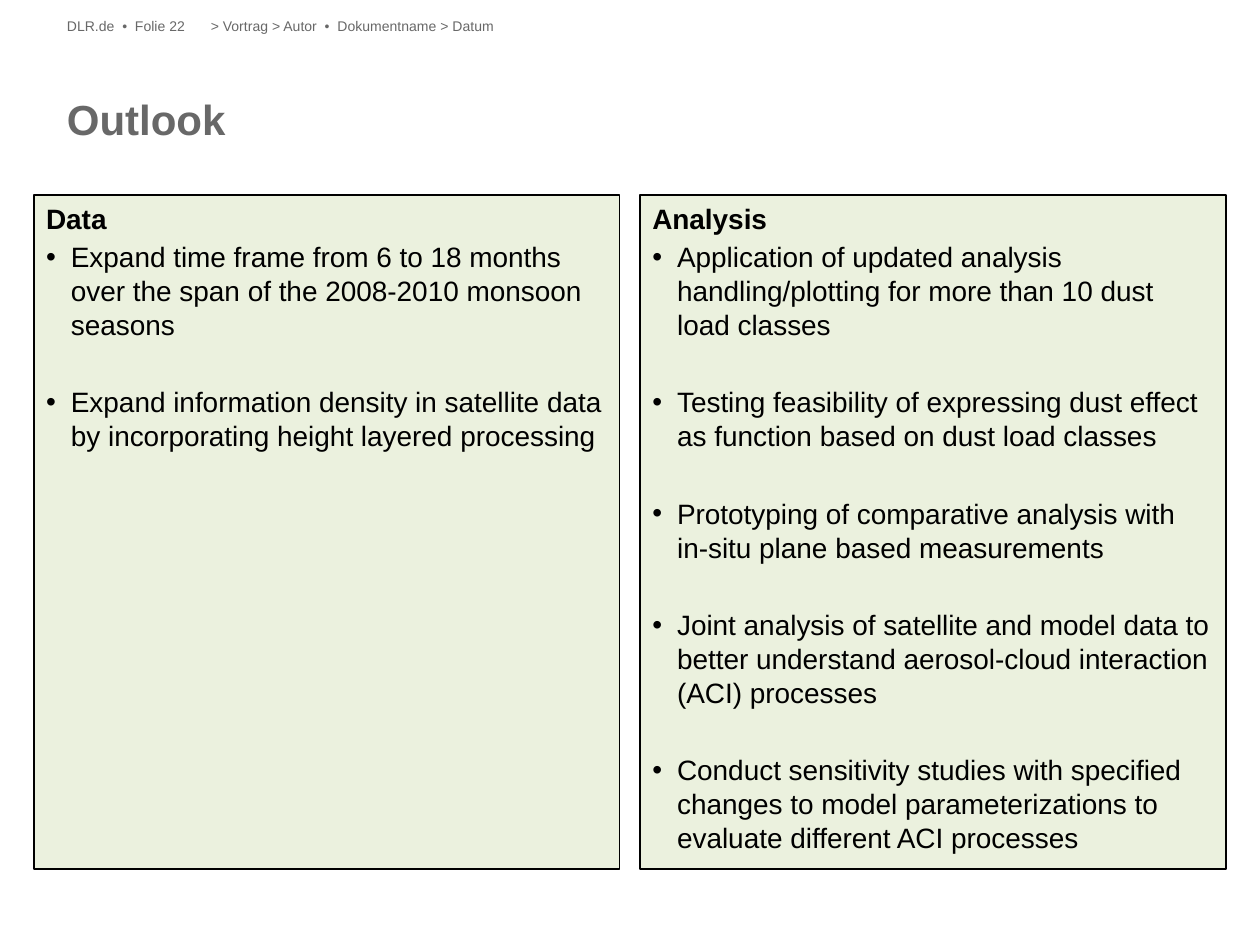
import pptx
import pptx.dml.color
import pptx.enum.shapes
import pptx.enum.text
import pptx.oxml.ns
import pptx.util
from lxml import etree

Cm, Pt = pptx.util.Cm, pptx.util.Pt
RGBColor = pptx.dml.color.RGBColor

GREY = RGBColor(0x68, 0x68, 0x68)
BLACK = RGBColor(0x00, 0x00, 0x00)
PALE_GREEN = RGBColor(0xEB, 0xF1, 0xDE)


def write(p, text, size=16, color=BLACK, bold=False, bullet=False,
          before=0, font="Arial"):
    """Fill a paragraph with one formatted run."""
    p.alignment = pptx.enum.text.PP_ALIGN.LEFT
    p.line_spacing = 1.0
    p.space_before = Pt(before)
    if bullet:
        pPr = p._p.get_or_add_pPr()
        pPr.set("marL", str(Cm(0.5)))
        pPr.set("indent", str(-Cm(0.5)))
        etree.SubElement(pPr, pptx.oxml.ns.qn("a:buFont"), typeface="Arial")
        etree.SubElement(pPr, pptx.oxml.ns.qn("a:buChar"), char="•")
    r = p.add_run()
    r.text = text
    r.font.name = font
    r.font.size = Pt(size)
    r.font.bold = bold
    r.font.color.rgb = color


class Deck:
    """Holds the slide and the shared panel style."""
    panel_top, panel_width, panel_height = Cm(3.93), Cm(11.81), Cm(13.59)
    heading_gap = 3     # points between heading and first bullet
    bullet_gap = 25.3   # points between bullets

    def __init__(self, prs):
        self.s = prs.slides.add_slide(prs.slide_layouts[6])

    def label(self, text, left, top, width, height, **fmt):
        sp = self.s.shapes.add_textbox(left, top, width, height)
        tf = sp.text_frame
        tf.word_wrap = True
        tf.margin_left = tf.margin_right = tf.margin_top = tf.margin_bottom = 0
        write(tf.paragraphs[0], text, color=GREY, **fmt)

    def panel(self, left, heading, bullets):
        sp = self.s.shapes.add_shape(
            pptx.enum.shapes.MSO_SHAPE.RECTANGLE,
            left, self.panel_top, self.panel_width, self.panel_height)
        sp.shadow.inherit = False
        sp.fill.solid()
        sp.fill.fore_color.rgb = PALE_GREEN
        sp.line.color.rgb = BLACK
        sp.line.width = Pt(1)
        tf = sp.text_frame
        tf.word_wrap = True
        tf.vertical_anchor = pptx.enum.text.MSO_ANCHOR.TOP
        write(tf.paragraphs[0], heading, bold=True)
        for i, text in enumerate(bullets):
            write(tf.add_paragraph(), text, bullet=True,
                  before=self.bullet_gap if i else self.heading_gap)


def main():
    prs = pptx.Presentation()
    prs.slide_width, prs.slide_height = Cm(25.4), Cm(19.05)
    deck = Deck(prs)

    # Title and header line
    deck.label("Outlook", Cm(1.35), Cm(1.88), Cm(22.71), Cm(2.06),
               size=24, bold=True)
    deck.label("DLR.de  •  Folie 22", Cm(1.35), Cm(0.36), Cm(2.9), Cm(0.41),
               size=8)
    deck.label("> Vortrag > Autor  •  Dokumentname > Datum",
               Cm(4.25), Cm(0.36), Cm(19.81), Cm(0.41), size=8)

    # Two panels
    deck.panel(Cm(0.68), "Data", [
        "Expand time frame from 6 to 18 months over the span of the "
        "2008-2010 monsoon seasons",
        "Expand information density in satellite data by incorporating "
        "height layered processing",
    ])
    deck.panel(Cm(12.9), "Analysis", [
        "Application of updated analysis handling/plotting for more than "
        "10 dust load classes",
        "Testing feasibility of expressing dust effect as function based on "
        "dust load classes",
        "Prototyping of comparative analysis with in-situ plane based "
        "measurements",
        "Joint analysis of satellite and model data to better understand "
        "aerosol-cloud interaction (ACI) processes",
        "Conduct sensitivity studies with specified changes to model "
        "parameterizations to evaluate different ACI processes",
    ])

    prs.save("out.pptx")


if __name__ == "__main__":
    main()
